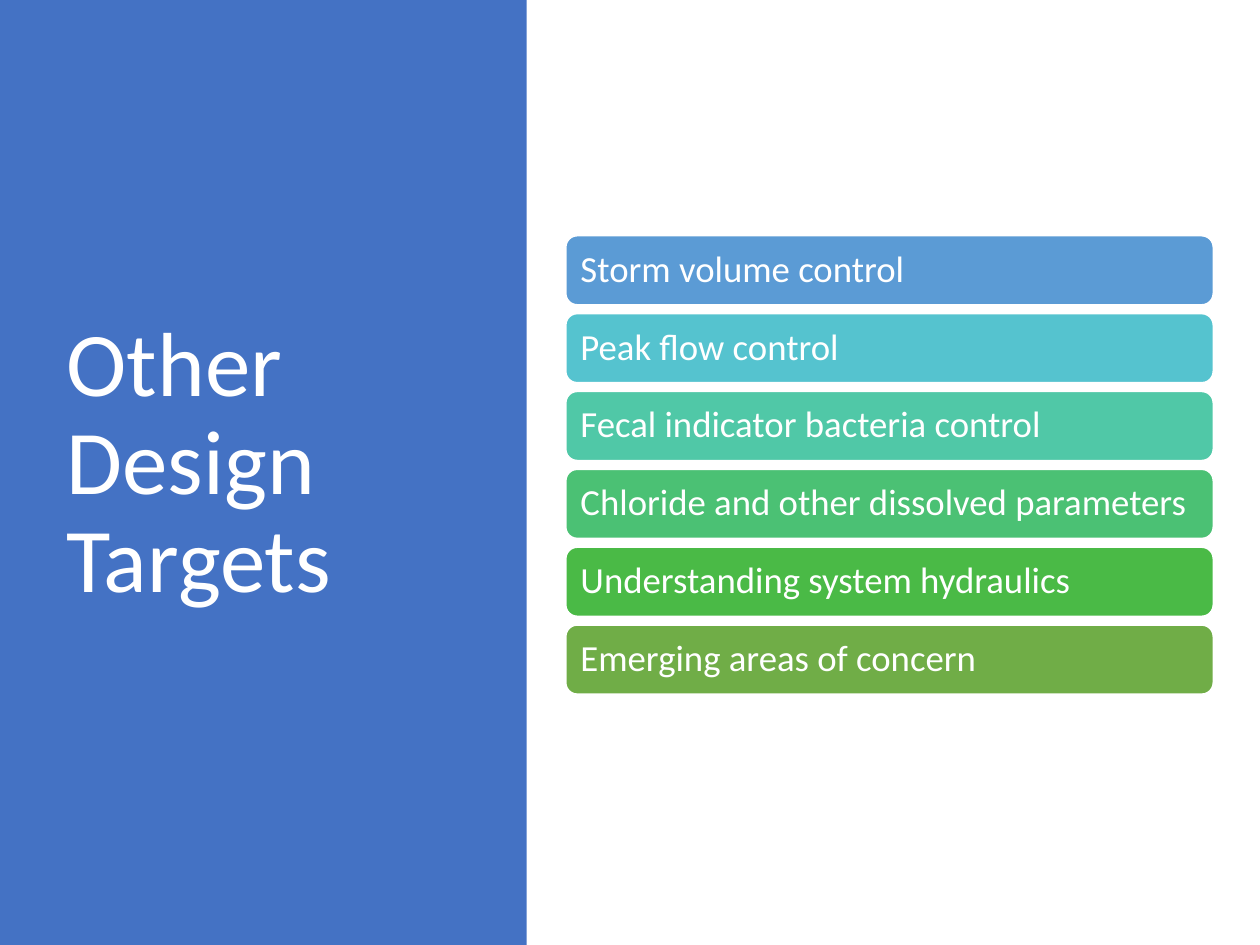
from dataclasses import dataclass

from pptx import Presentation
from pptx.dml.color import RGBColor
from pptx.enum.shapes import MSO_SHAPE
from pptx.enum.text import MSO_ANCHOR, MSO_AUTO_SIZE, PP_ALIGN
from pptx.util import Inches, Pt

RECTANGLE = MSO_SHAPE.RECTANGLE
ROUNDED = MSO_SHAPE.ROUNDED_RECTANGLE
MIDDLE = MSO_ANCHOR.MIDDLE
NO_FIT = MSO_AUTO_SIZE.NONE
LEFT = PP_ALIGN.LEFT
TITLE_ONLY = 5


@dataclass(frozen=True)
class Theme:
    font: str = "Calibri"
    white: RGBColor = RGBColor.from_string("FFFFFF")
    panel: RGBColor = RGBColor.from_string("4472C4")
    title_size: Pt = Pt(52)
    target_size: Pt = Pt(21)
    outline: Pt = Pt(1)


THEME = Theme()

TARGETS = [
    ("Storm volume control", "5B9BD5"),
    ("Peak flow control", "55C3CF"),
    ("Fecal indicator bacteria control", "50C8A7"),
    ("Chloride and other dissolved parameters", "4BC174"),
    ("Understanding system hydraulics", "4ABA46"),
    ("Emerging areas of concern", "70AD47"),
]


def apply_format(target, values):
    for attribute, value in values.items():
        setattr(target, attribute, value)


def write_text(shape, text, size, inset_x, inset_y):
    frame = shape.text_frame
    apply_format(frame, {
        "text": text, "word_wrap": True, "auto_size": NO_FIT,
        "vertical_anchor": MIDDLE,
        "margin_left": inset_x, "margin_right": inset_x,
        "margin_top": inset_y, "margin_bottom": inset_y,
    })
    paragraph = frame.paragraphs[0]
    apply_format(paragraph, {"alignment": LEFT, "line_spacing": 0.9})
    apply_format(paragraph.font, {"name": THEME.font, "size": size})
    paragraph.font.color.rgb = THEME.white


def add_block(slide, preset, box, color):
    block = slide.shapes.add_shape(preset, *box)
    block.shadow.inherit = False
    block.fill.solid()
    block.fill.fore_color.rgb = color
    return block


def build_title_panel(slide, box):
    left, top, width, height = box
    panel = add_block(slide, RECTANGLE, box, THEME.panel)
    panel.line.fill.background()
    title = slide.shapes.title
    title.element.addprevious(panel.element)
    apply_format(title, {
        "left": left + Inches(0.43), "top": top + Inches(0.68),
        "width": width - Inches(1.06), "height": height - Inches(1.48),
    })
    write_text(title, "Other Design Targets", THEME.title_size,
               Inches(0.1), Inches(0.05))


def build_target_list(slide, box):
    left, top, width, height = box
    bar_height = Inches(0.55)
    pitch = (height - bar_height) / (len(TARGETS) - 1)
    for row, (target, color) in enumerate(TARGETS):
        bar_box = (left, top + round(row * pitch), width, bar_height)
        bar = add_block(slide, ROUNDED, bar_box, RGBColor.from_string(color))
        bar.line.color.rgb = THEME.white
        bar.line.width = THEME.outline
        write_text(bar, target, THEME.target_size, Inches(0.09), Inches(0.09))


def main():
    deck = Presentation()
    deck.slide_width = Inches(10)
    deck.slide_height = Inches(7.5)
    slide = deck.slides.add_slide(deck.slide_layouts[TITLE_ONLY])
    build_title_panel(slide, (0, 0, Inches(4.18), deck.slide_height))
    build_target_list(
        slide, (Inches(4.49), Inches(1.87), Inches(5.14), Inches(3.64)))
    deck.save("out.pptx")


if __name__ == "__main__":
    main()
